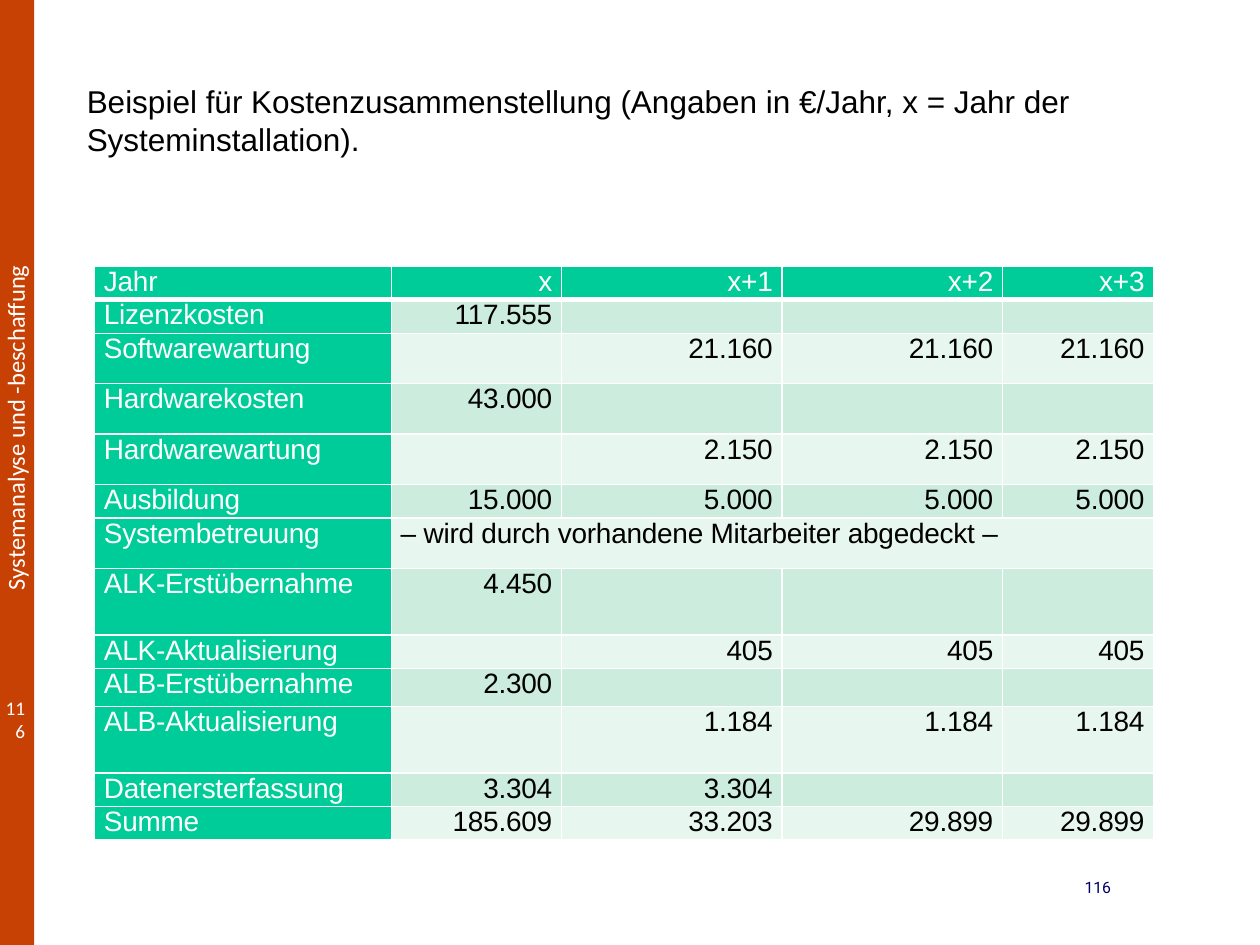
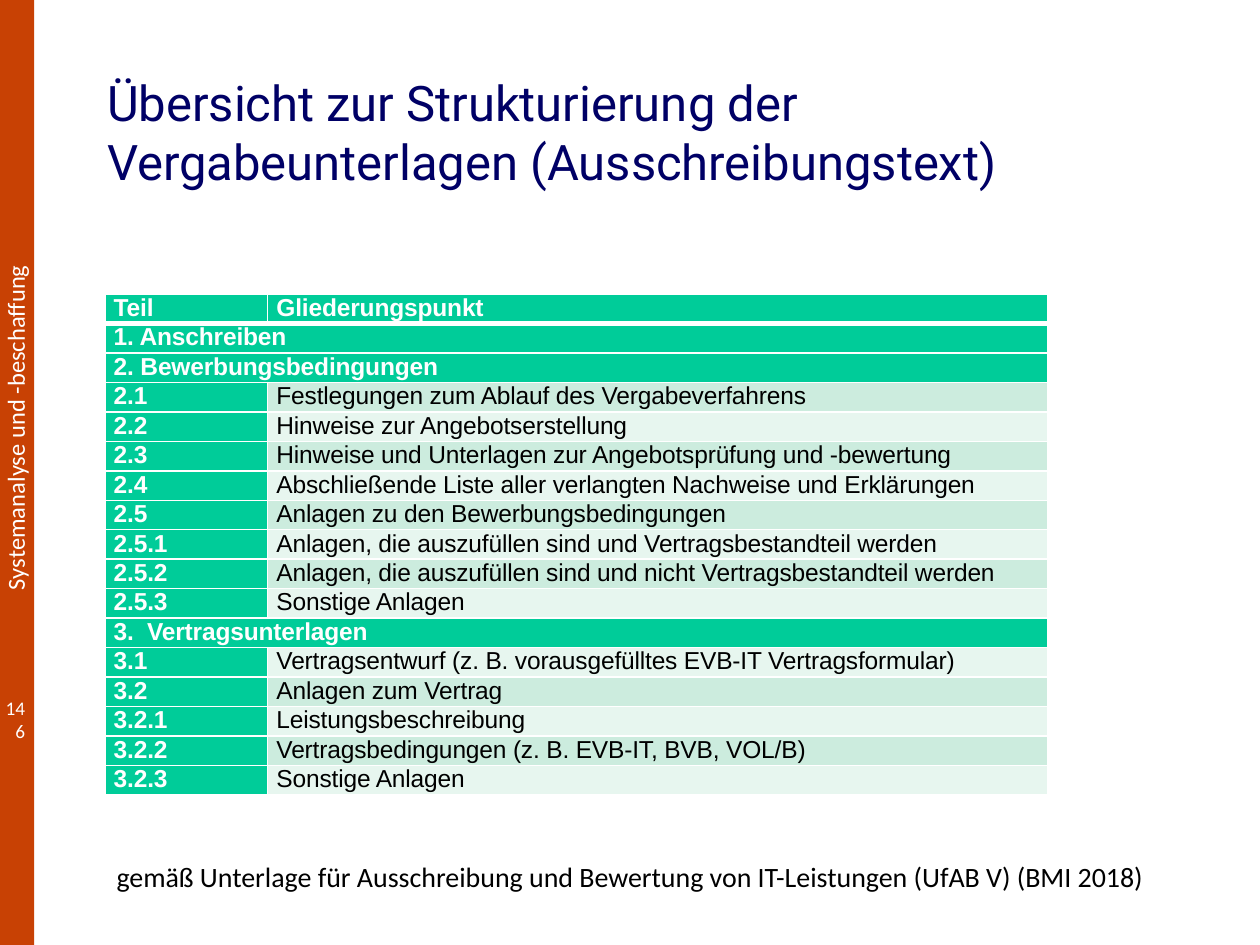
from lxml.etree import SubElement
from pptx import Presentation
from pptx.dml.color import RGBColor
from pptx.enum.shapes import MSO_SHAPE
from pptx.enum.text import MSO_ANCHOR, MSO_AUTO_SIZE, PP_ALIGN
from pptx.oxml.ns import qn
from pptx.util import Pt

ORANGE = RGBColor(0xC8, 0x41, 0x04)
NAVY = RGBColor(0x00, 0x00, 0x66)
GREEN = RGBColor(0x00, 0xCC, 0x99)
BAND_DARK = RGBColor(0xCC, 0xEC, 0xDE)
BAND_LIGHT = RGBColor(0xE7, 0xF6, 0xEF)
WHITE = RGBColor(0xFF, 0xFF, 0xFF)
BLACK = RGBColor(0x00, 0x00, 0x00)

SLIDE_WIDTH, SLIDE_HEIGHT = 720, 540
SIDEBAR_WIDTH = 19.5
TITLE_ONLY, BLANK = 5, 6

LOW, MIDDLE, HIGH = 19.2, 28.8, 38
COST_COLUMNS = [169.6, 97.4, 126, 126, 86.4]
# Row height, label and yearly values
COSTS = [
    (LOW, "Jahr", "x", "x+1", "x+2", "x+3"),
    (LOW, "Lizenzkosten", "117.555", "", "", ""),
    (MIDDLE, "Softwarewartung", "", "21.160", "21.160", "21.160"),
    (MIDDLE, "Hardwarekosten", "43.000", "", "", ""),
    (MIDDLE, "Hardwarewartung", "", "2.150", "2.150", "2.150"),
    (LOW, "Ausbildung", "15.000", "5.000", "5.000", "5.000"),
    (MIDDLE, "Systembetreuung", "– wird durch vorhandene Mitarbeiter abgedeckt –"),
    (HIGH, "ALK-Erstübernahme", "4.450", "", "", ""),
    (LOW, "ALK-Aktualisierung", "", "405", "405", "405"),
    (21.6, "ALB-Erstübernahme", "2.300", "", "", ""),
    (HIGH, "ALB-Aktualisierung", "", "1.184", "1.184", "1.184"),
    (LOW, "Datenersterfassung", "3.304", "3.304", "", ""),
    (LOW, "Summe", "185.609", "33.203", "29.899", "29.899"),
]

OUTLINE_COLUMNS = [93, 445.5]
OUTLINE_ROW_HEIGHT = 16.8
OUTLINE = [
    ("Teil", "Gliederungspunkt"),
    ("1. Anschreiben",),
    ("2. Bewerbungsbedingungen",),
    ("2.1", "Festlegungen zum Ablauf des Vergabeverfahrens"),
    ("2.2", "Hinweise zur Angebotserstellung"),
    ("2.3", "Hinweise und Unterlagen zur Angebotsprüfung und -bewertung"),
    ("2.4", "Abschließende Liste aller verlangten Nachweise und Erklärungen"),
    ("2.5", "Anlagen zu den Bewerbungsbedingungen"),
    ("2.5.1", "Anlagen, die auszufüllen sind und Vertragsbestandteil werden"),
    ("2.5.2", "Anlagen, die auszufüllen sind und nicht Vertragsbestandteil werden"),
    ("2.5.3", "Sonstige Anlagen"),
    ("3.  Vertragsunterlagen",),
    ("3.1", "Vertragsentwurf (z. B. vorausgefülltes EVB-IT Vertragsformular)"),
    ("3.2", "Anlagen zum Vertrag"),
    ("3.2.1", "Leistungsbeschreibung"),
    ("3.2.2", "Vertragsbedingungen (z. B. EVB-IT, BVB, VOL/B)"),
    ("3.2.3", "Sonstige Anlagen"),
]


def format_paragraph(paragraph, font_name, size, color, alignment, bold=False):
    paragraph.alignment = alignment
    font = paragraph.font
    font.name, font.size, font.bold = font_name, Pt(size), bold
    font.color.rgb = color


def add_text(slide, box, text, font_name, size, color, alignment=PP_ALIGN.LEFT, wrap=True):
    text_box = slide.shapes.add_textbox(*map(Pt, box))
    text_box.text_frame.word_wrap = wrap
    paragraph = text_box.text_frame.paragraphs[0]
    paragraph.text = text
    format_paragraph(paragraph, font_name, size, color, alignment)
    return text_box


def add_caption(slide, box, text, font_name, size):
    caption = add_text(slide, box, text, font_name, size, BLACK)
    caption.fill.solid()
    caption.fill.fore_color.rgb = WHITE


def add_sidebar(slide, page_number):
    band = slide.shapes.add_shape(MSO_SHAPE.RECTANGLE, 0, 0, Pt(SIDEBAR_WIDTH), Pt(SLIDE_HEIGHT))
    band.shadow.inherit = False
    band.fill.solid()
    band.fill.fore_color.rgb = ORANGE
    band.line.fill.background()
    course = add_text(slide, (-92, 231, 202, 24.5), "Systemanalyse und -beschaffung",
                      "Calibri", 14, WHITE, wrap=False)
    course.rotation = 270
    add_text(slide, (-8.6, 394.5, 30, 24), page_number, "Calibri", 11, WHITE, PP_ALIGN.RIGHT)


def set_borders(cell, widths):
    """Draw white borders with the widths given for left, right, top and bottom."""
    properties = cell._tc.get_or_add_tcPr()
    for index, (side, width) in enumerate(zip("LRTB", widths)):
        line = SubElement(properties, qn(f"a:ln{side}"), w=str(Pt(width)))
        fill = SubElement(line, qn("a:solidFill"))
        SubElement(fill, qn("a:srgbClr"), val=str(WHITE))
        properties.insert(index, line)


def fill_cell(cell, text, size, fill, color, alignment, bold, margin):
    cell.margin_left = cell.margin_right = Pt(margin)
    cell.margin_top = cell.margin_bottom = 0
    cell.fill.solid()
    cell.fill.fore_color.rgb = fill
    paragraph = cell.text_frame.paragraphs[0]
    paragraph.text = text
    format_paragraph(paragraph, "Arial", size, color, alignment, bold)
    paragraph._p.pPr.find(qn("a:defRPr")).set("spc", "-10")
    if not text:
        SubElement(paragraph._p, qn("a:endParaRPr"), sz=str(size * 100))


def add_banded_table(slide, left, top, columns, heights, rows, size, margin,
                     bold_labels=False, numeric=False):
    """Place a table with green header and labels; a short row's last cell spans the rest."""
    table = slide.shapes.add_table(len(rows), len(columns), Pt(left), Pt(top),
                                   Pt(sum(columns)), Pt(sum(heights))).table
    table.first_row = table.horz_banding = False
    for column, width in zip(table.columns, columns):
        column.width = Pt(width)
    for row_index, (height, texts) in enumerate(zip(heights, rows)):
        table.rows[row_index].height = Pt(height)
        band = BAND_DARK if row_index % 2 else BAND_LIGHT
        last = len(texts) - 1
        spans = len(texts) < len(columns)
        for column_index in range(len(columns)):
            cell = table.cell(row_index, column_index)
            source_column = min(column_index, last)
            is_label = row_index == 0 or source_column == 0
            is_number = numeric and column_index > 0 and not spans
            fill_cell(cell, texts[column_index] if column_index <= last else "", size,
                      GREEN if is_label else band, WHITE if is_label else BLACK,
                      PP_ALIGN.RIGHT if is_number else PP_ALIGN.JUSTIFY,
                      bold_labels and is_label, margin)
            set_borders(cell, (1, 1, 3 if row_index == 1 else 1, 3 if row_index == 0 else 1))
        if spans:
            table.cell(row_index, last).merge(table.cell(row_index, len(columns) - 1))


def build_cost_slide(presentation):
    slide = presentation.slides.add_slide(presentation.slide_layouts[BLANK])
    add_sidebar(slide, "116")
    add_banded_table(slide, 54, 152, COST_COLUMNS, [row[0] for row in COSTS],
                     [row[1:] for row in COSTS], 16, 5.4, numeric=True)
    add_text(slide, (498, 498, 144, 30), "116", "Roboto", 9, NAVY, PP_ALIGN.RIGHT)
    add_caption(slide, (42.5, 43.2, 658, 51),
                "Beispiel für Kostenzusammenstellung (Angaben in €/Jahr, "
                "x = Jahr der Systeminstallation).", "Arial", 18)


def set_title(slide, box, text):
    title = slide.shapes.title
    title.left, title.top, title.width, title.height = map(Pt, box)
    frame = title.text_frame
    frame.text = text
    frame.auto_size = MSO_AUTO_SIZE.NONE
    frame.vertical_anchor = MSO_ANCHOR.MIDDLE
    format_paragraph(frame.paragraphs[0], "Roboto", 28, NAVY, PP_ALIGN.LEFT)


def build_outline_slide(presentation):
    slide = presentation.slides.add_slide(presentation.slide_layouts[TITLE_ONLY])
    add_sidebar(slide, "146")
    set_title(slide, (54, 48, 589, 54),
              "Übersicht zur Strukturierung der Vergabeunterlagen (Ausschreibungstext)")
    add_banded_table(slide, 60, 168, OUTLINE_COLUMNS, [OUTLINE_ROW_HEIGHT] * len(OUTLINE),
                     OUTLINE, 14, 5, bold_labels=True)
    add_caption(slide, (59.5, 487.5, 624, 26.6),
                "gemäß Unterlage für Ausschreibung und Bewertung von IT-Leistungen "
                "(UfAB V) (BMI 2018)", "Calibri", 16)


def main():
    presentation = Presentation()
    presentation.slide_width, presentation.slide_height = Pt(SLIDE_WIDTH), Pt(SLIDE_HEIGHT)
    build_cost_slide(presentation)
    build_outline_slide(presentation)
    presentation.save("out.pptx")


if __name__ == "__main__":
    main()
